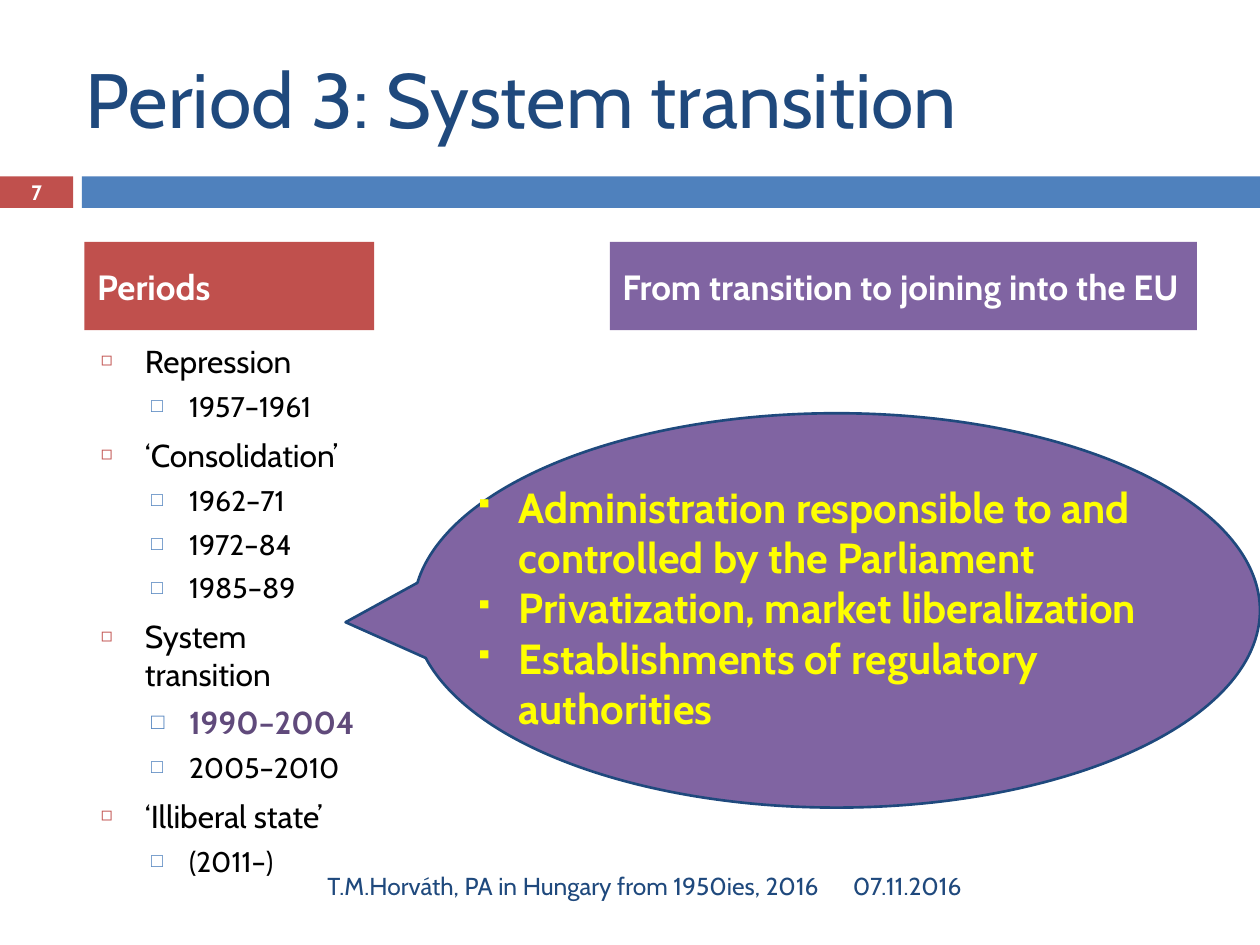
from lxml.etree import SubElement
from pptx import Presentation
from pptx.dml.color import RGBColor
from pptx.enum.shapes import MSO_SHAPE as Shape
from pptx.enum.text import MSO_ANCHOR as Anchor, MSO_AUTO_SIZE as AutoSize, PP_ALIGN as Align
from pptx.oxml.ns import qn
from pptx.util import Inches, Pt

COLORS = {
    "navy": "1F497D", "blue": "4F81BD", "red": "C0504D", "purple": "8064A2",
    "plum": "604A7B", "yellow": "FFFF00", "white": "FFFFFF", "black": "000000",
}
COMPARISON = 4
PERIODS = [
    ("Repression", ["1957–1961"]),
    ("‘Consolidation’", ["1962–71", "1972–84", "1985–89"]),
    ("System transition", ["1990–2004", "2005–2010"]),
    ("‘Illiberal state’", ["(2011–)"]),
]
CURRENT_PERIOD = "1990–2004"
CHANGES = [
    "Administration responsible to and controlled by the Parliament",
    "Privatization, market liberalization",
    "Establishments of regulatory authorities",
]


def rgb(color):
    return RGBColor.from_string(COLORS[color])


def write(paragraph, text, size=20, color="black", bold=False, align=Align.LEFT,
          before=0, level=0, bullet=None, bullet_color="red", bullet_size=60):
    paragraph.level = level
    paragraph.alignment = align
    paragraph.space_before = Pt(before)
    run = paragraph.add_run()
    run.text = text
    run.font.name = "Cabin"
    run.font.size = Pt(size)
    run.font.bold = bold
    run.font.color.rgb = rgb(color)
    props = paragraph._p.get_or_add_pPr()
    margin, indent = ((0.35, -0.35), (0.7, -0.3))[level] if bullet else (0, 0)
    props.set("marL", str(Inches(margin)))
    props.set("indent", str(Inches(indent)))
    if bullet:
        tint = SubElement(props, qn("a:buClr"))
        SubElement(tint, qn("a:srgbClr"), val=COLORS[bullet_color])
        SubElement(props, qn("a:buSzPct"), val=str(bullet_size * 1000))
        SubElement(props, qn("a:buChar"), char=bullet)
    else:
        SubElement(props, qn("a:buNone"))


class Deck:
    COLUMNS, ROWS = 100, 75

    def __init__(self):
        self.prs = Presentation()
        self.prs.slide_width, self.prs.slide_height = Inches(10), Inches(7.5)
        self.slide = None

    def new_slide(self, layout):
        self.slide = self.prs.slides.add_slide(self.prs.slide_layouts[layout])

    def area(self, left, top, width, height):
        column = self.prs.slide_width / self.COLUMNS
        row = self.prs.slide_height / self.ROWS
        return [round(n * unit) for n, unit in zip((left, top, width, height), (column, row) * 2)]

    def fill_text(self, holder, lines, anchor):
        frame = holder.text_frame
        frame.word_wrap = True
        frame.auto_size = AutoSize.NONE
        frame.vertical_anchor = anchor
        for number, (text, style) in enumerate(lines):
            paragraph = frame.add_paragraph() if number else frame.paragraphs[0]
            write(paragraph, text, **style)

    def placeholder(self, idx, area, lines, anchor=Anchor.MIDDLE, fill=None):
        holder = self.slide.placeholders[idx]
        holder.left, holder.top, holder.width, holder.height = self.area(*area)
        if fill:
            holder.fill.solid()
            holder.fill.fore_color.rgb = rgb(fill)
        self.fill_text(holder, lines, anchor)

    def label(self, area, lines, anchor=Anchor.MIDDLE):
        self.fill_text(self.slide.shapes.add_textbox(*self.area(*area)), lines, anchor)

    def shape(self, kind, area, fill, line=None, adjustments=()):
        figure = self.slide.shapes.add_shape(kind, *self.area(*area))
        figure.shadow.inherit = False
        figure.fill.solid()
        figure.fill.fore_color.rgb = rgb(fill)
        if line:
            figure.line.color.rgb = rgb(line)
            figure.line.width = Pt(1.5)
        else:
            figure.line.fill.background()
        for number, value in enumerate(adjustments):
            figure.adjustments[number] = value

    def drop_empty_placeholders(self):
        for holder in list(self.slide.placeholders):
            if not holder.text_frame.text:
                holder._element.getparent().remove(holder._element)


def period_lines():
    for period, spans in PERIODS:
        yield period, dict(size=18.1, before=7, bullet="◻")
        for span in spans:
            emphasis = dict(size=18.1, color="plum", bold=True) if span == CURRENT_PERIOD else dict(size=16.2)
            yield span, dict(before=5.5, level=1, bullet="□", bullet_color="blue",
                             bullet_size=70, **emphasis)


def main():
    deck = Deck()
    deck.new_slide(COMPARISON)
    deck.shape(Shape.RECTANGLE, (0, 14, 5.8, 2.5), "red")
    deck.shape(Shape.RECTANGLE, (6.5, 14, 93.5, 2.5), "blue")
    deck.placeholder(0, (5.8, 3, 89.2, 9.5),
                     [("Period 3: System transition", dict(size=44, color="navy"))])
    deck.placeholder(2, (7, 26.6, 23.8, 39.2), period_lines(), Anchor.TOP)

    footer = dict(size=14, color="navy")
    deck.label((66.7, 68.3, 29.2, 4), [("07.11.2016", footer)])
    deck.label((6.7, 68.3, 59.3, 4),
               [("T.M.Horváth, PA in Hungary from 1950ies, 2016", dict(footer, align=Align.RIGHT))])
    deck.label((0, 13.9, 5.8, 2.7),
               [("7", dict(size=11.9, color="white", bold=True, align=Align.CENTER))])

    heading = dict(color="white", bold=True, before=7)
    deck.placeholder(1, (6.7, 19.2, 23, 7), [("Periods", heading)], fill="red")
    deck.placeholder(3, (48.4, 19.2, 46.6, 7),
                     [("From transition to joining into the EU", heading)], fill="purple")

    deck.shape(Shape.OVAL_CALLOUT, (32.8, 32.8, 67.2, 31.3), "purple", "navy", (-0.58, 0.03))
    change = dict(size=24, color="yellow", bold=True, bullet="▪", bullet_color="yellow")
    deck.label((36.7, 37.7, 60.2, 21), [(text, change) for text in CHANGES], Anchor.TOP)
    deck.drop_empty_placeholders()
    deck.prs.save("out.pptx")


if __name__ == "__main__":
    main()
